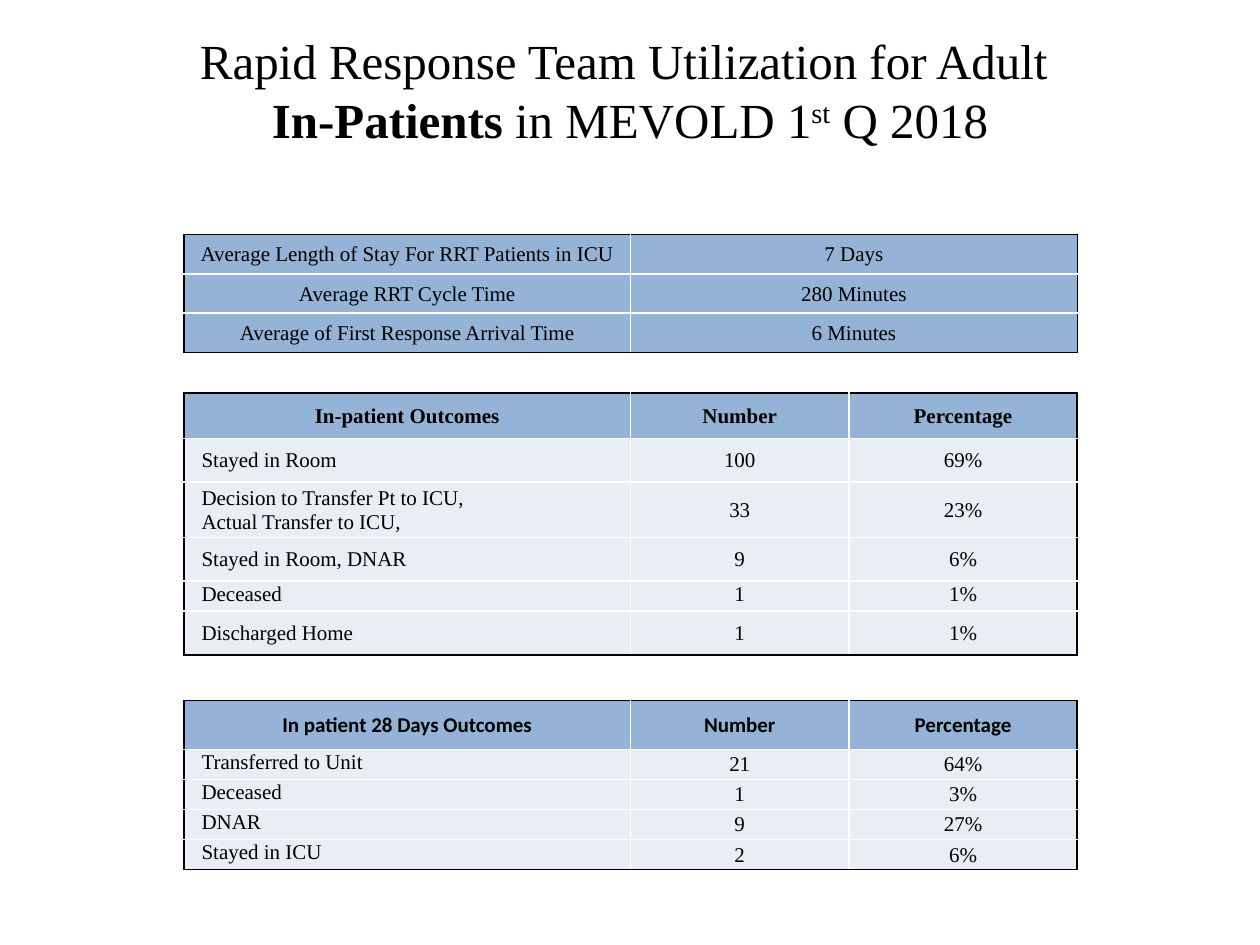
import pptx
import pptx.util
import pptx.dml.color
import pptx.enum.text
import pptx.oxml
import pptx.oxml.ns
from dataclasses import dataclass

Inches, Pt = pptx.util.Inches, pptx.util.Pt
Align, Anchor = pptx.enum.text.PP_ALIGN, pptx.enum.text.MSO_ANCHOR
WIDE, HIGH = Inches(10), Inches(7.5)


@dataclass(frozen=True)
class Theme:
    """Colours, faces and type sizes of the slide."""
    ink: str = "000000"
    rule: str = "FFFFFF"
    head: str = "95B3D7"
    body: str = "E9EDF4"
    serif: str = "Times New Roman"
    sans: str = "Calibri"
    title: int = 28
    text: int = 12


THEME = Theme()


def place(x, y, w, h):
    """Turn shares of the slide into a box."""
    return int(x * WIDE), int(y * HIGH), int(w * WIDE), int(h * HIGH)


def style(run, size, face=THEME.serif, bold=False):
    """Set the font of one run."""
    font = run.font
    font.size, font.name, font.bold = Pt(size), face, bold
    font.color.rgb = pptx.dml.color.RGBColor.from_string(THEME.ink)


def edge(cell, row, col, rows, cols):
    """Rule a cell: dark on the table's outside, light within."""
    outer = {"L": col == 0, "R": col == cols - 1,
             "T": row == 0, "B": row == rows - 1}
    props = cell._tc.get_or_add_tcPr()
    for spot, (side, out) in enumerate(outer.items()):
        tone = THEME.ink if out else THEME.rule
        props.insert(spot, pptx.oxml.parse_xml(
            f'<a:ln{side} {pptx.oxml.ns.nsdecls("a")} w="{Pt(1)}"><a:solidFill>'
            f'<a:srgbClr val="{tone}"/></a:solidFill></a:ln{side}>'))


def fill(cell, text, tone, face, bold, left, top):
    """Write and colour one cell."""
    cell.text = text
    cell.margin_left = Inches(0.14 if left else 0.01)
    cell.margin_right = cell.margin_top = Inches(0.01)
    cell.margin_bottom = 0
    cell.vertical_anchor = Anchor.TOP if top else Anchor.MIDDLE
    cell.fill.solid()
    cell.fill.fore_color.rgb = pptx.dml.color.RGBColor.from_string(tone)
    for para in cell.text_frame.paragraphs:
        para.alignment = Align.LEFT if left else Align.CENTER
        for run in para.runs:
            style(run, THEME.text, face, bold)


def grid(slide, box, data, cols, rows, heads=1, bold=True,
         face=THEME.serif, high=()):
    """Draw a table in a box, with columns and rows sized by weight."""
    table = slide.shapes.add_table(len(rows), len(cols), *box).table
    table.first_row = table.horz_banding = False
    for col, part in zip(table.columns, cols):
        col.width = int(box[2] * part / sum(cols))
    for row, part in zip(table.rows, rows):
        row.height = int(box[3] * part / sum(rows))
    for r, line in enumerate(data):
        head = r < heads
        for c, text in enumerate(line):
            cell = table.cell(r, c)
            fill(cell, text, THEME.head if head else THEME.body,
                 face if head else THEME.serif, head and bold,
                 not head and c == 0, (r, c) in high)
            edge(cell, r, c, len(rows), len(cols))


def title(slide, box):
    """Write the two-line title in the upper part of its box."""
    frame = slide.shapes.add_textbox(*box).text_frame
    frame.word_wrap = True
    frame.vertical_anchor = Anchor.MIDDLE
    frame.margin_bottom = int(box[3] * 0.4)
    para = frame.paragraphs[0]
    para.alignment = Align.CENTER
    parts = ("Rapid Response Team Utilization for Adult ", "In-Patients",
             " in MEVOLD 1", "st", " Q 2018")
    for spot, text in enumerate(parts):
        if spot == 1:
            para.add_line_break()
        run = para.add_run()
        run.text = text
        style(run, THEME.title, bold=spot == 1)
        if text == "st":
            run.font._element.set("baseline", "30000")


def times(slide, box):
    """Show the average times."""
    data = (("Average Length of Stay For RRT Patients in ICU", "7 Days"),
            ("Average RRT Cycle Time", "280 Minutes"),
            ("Average of First Response Arrival Time", "6 Minutes"))
    grid(slide, box, data, (1, 1), (1, 1, 1), heads=3, bold=False)


def stays(slide, box, cols):
    """Show the in-patient outcomes."""
    data = (("In-patient Outcomes", "Number", "Percentage"),
            ("Stayed in Room", "100", "69%"),
            ("Decision to Transfer Pt to ICU,\nActual Transfer to ICU,",
             "33", "23%"),
            ("Stayed in Room, DNAR", "9", "6%"),
            ("Deceased", "1", "1%"),
            ("Discharged Home", "1", "1%"))
    grid(slide, box, data, cols, (36, 35, 44, 35, 24, 35),
         high={(4, c) for c in range(3)})


def month(slide, box, cols):
    """Show the outcomes after 28 days."""
    data = (("In patient 28 Days Outcomes", "Number", "Percentage"),
            ("Transferred to Unit", "21", "64%"),
            ("Deceased", "1", "3%"),
            ("DNAR", "9", "27%"),
            ("Stayed in ICU", "2", "6%"))
    grid(slide, box, data, cols, (39, 24, 24, 24, 24), face=THEME.sans,
         high={(r, 0) for r in range(1, 5)})


def main():
    """Build and save the slide."""
    deck = pptx.Presentation()
    deck.slide_width, deck.slide_height = WIDE, HIGH
    slide = deck.slides.add_slide(deck.slide_layouts[6])
    left, wide = Inches(1.46) / WIDE, Inches(7.09) / WIDE
    cols = (354, 173, 181)
    title(slide, place(0.05, 0.04, 0.9, 0.17))
    times(slide, place(left, 1.86 / 7.5, wide, 0.94 / 7.5))
    stays(slide, place(left, 3.12 / 7.5, wide, 2.08 / 7.5), cols)
    month(slide, place(left, 5.56 / 7.5, wide, 1.34 / 7.5), cols)
    deck.save("out.pptx")


if __name__ == "__main__":
    main()
